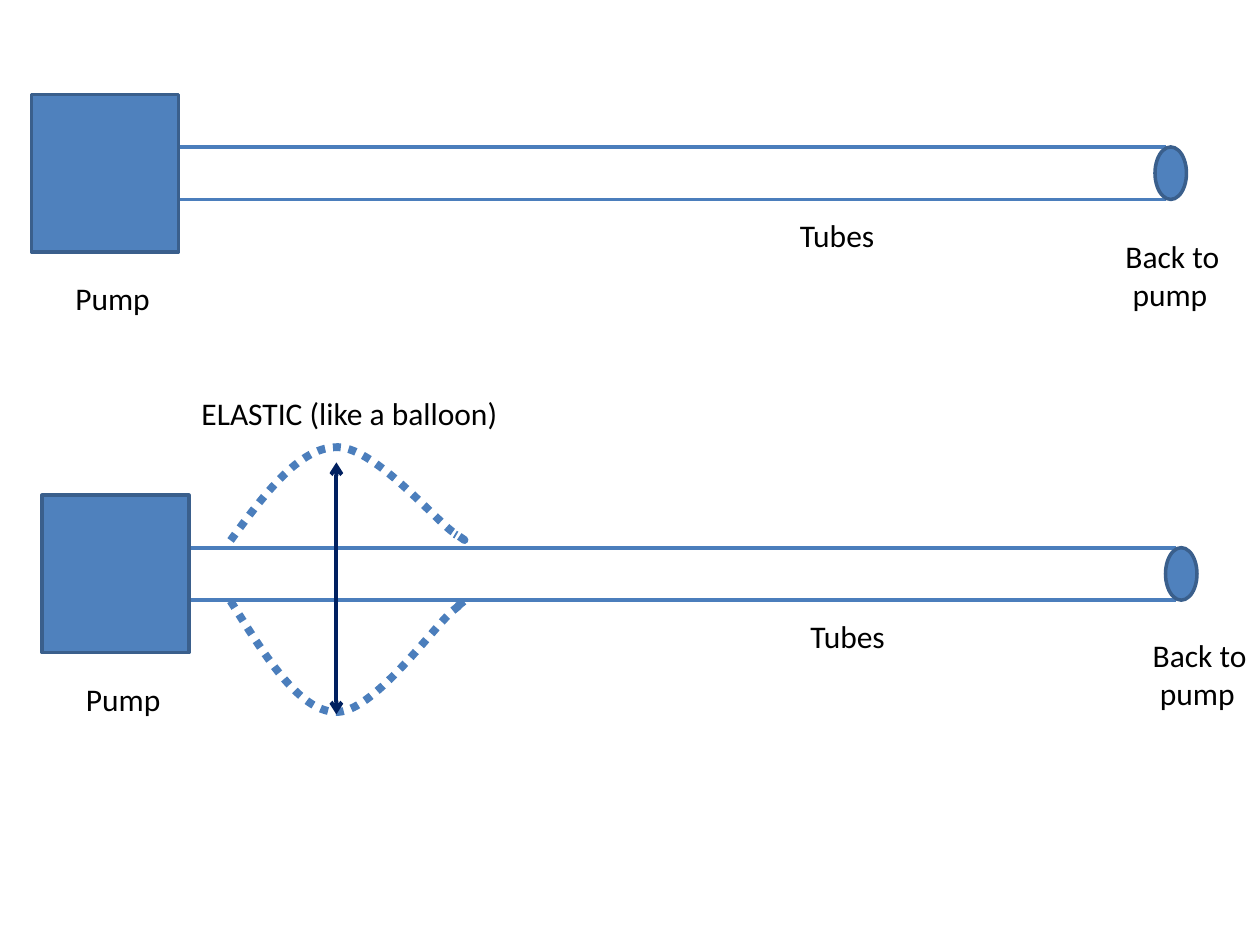
from dataclasses import dataclass

from lxml.etree import SubElement
from pptx import Presentation
from pptx.dml.color import RGBColor
from pptx.enum.dml import MSO_LINE
from pptx.enum.shapes import MSO_CONNECTOR, MSO_SHAPE
from pptx.enum.text import MSO_AUTO_SIZE
from pptx.oxml.ns import qn
from pptx.util import Inches, Pt

FILL, OUTLINE, TUBE, NAVY, BLACK = "4F81BD", "3A5F8C", "4B7EBC", "002060", "000000"
GRID = 1 / 12  # the drawing grid, in inches
TUBE_HEIGHT = 5 * GRID

Point = tuple[float, float]


@dataclass
class Circuit:
    """A pump with its tube, and where the return label stands."""
    left: float
    top: float
    return_left: float
    return_top: float


CIRCUITS = [Circuit(3 * GRID, 0.75, 106 * GRID, 22 * GRID),
            Circuit(4 * GRID, 3.93, 9.05, 5)]

# Start point, then two control points and an end point for each curve
UPPER_BULGE = [(1.83, 4.29), (2.1, 3.92), (2.37, 3.56), (2.66, 3.55),
               (2.95, 3.53), (3.43, 4.1), (3.59, 4.22),
               (3.75, 4.33), (3.68, 4.28), (3.61, 4.24)]
LOWER_BULGE = [(1.83, 4.77), (2.1, 5.2), (2.37, 5.64), (2.66, 5.65),
               (2.95, 5.67), (3.43, 4.99), (3.59, 4.85),
               (3.75, 4.72), (3.68, 4.77), (3.61, 4.83)]


def color(value: str) -> RGBColor:
    return RGBColor.from_string(value)


def style_line(line, value: str, width: float) -> None:
    line.color.rgb = color(value)
    line.width = Pt(width)


def add_solid(page, kind, left: float, top: float, width: float, height: float) -> None:
    shape = page.shapes.add_shape(kind, Inches(left), Inches(top), Inches(width), Inches(height))
    shape.shadow.inherit = False
    shape.fill.solid()
    shape.fill.fore_color.rgb = color(FILL)
    style_line(shape.line, OUTLINE, 2)


def add_line(page, start: Point, end: Point, value: str, arrows: bool = False) -> None:
    connector = page.shapes.add_connector(
        MSO_CONNECTOR.STRAIGHT, *(Inches(length) for length in start + end))
    style_line(connector.line, value, 2.25)
    properties = connector._element.spPr
    if arrows:
        outline = properties.find(qn("a:ln"))
        for tag in ("a:headEnd", "a:tailEnd"):
            SubElement(outline, qn(tag), type="arrow")
    SubElement(properties, qn("a:effectLst"))


def add_label(page, lines: list[str], left: float, top: float, width: float, height: float) -> None:
    box = page.shapes.add_textbox(Inches(left), Inches(top), Inches(width), Inches(height))
    frame = box.text_frame
    frame.word_wrap = False
    frame.auto_size = MSO_AUTO_SIZE.SHAPE_TO_FIT_TEXT
    frame.text = "\n".join(lines)
    for para in frame.paragraphs:
        para.font.name = "Calibri"
        para.font.size = Pt(18)
        para.font.color.rgb = color(BLACK)


def add_bulge(page, points: list[Point]) -> None:
    start, *rest = [(Inches(x), Inches(y)) for x, y in points]
    builder = page.shapes.build_freeform(*start)
    builder.add_line_segments(rest, close=False)
    bulge = builder.convert_to_shape()
    # Turn each three straight segments into one cubic curve
    outline = next(bulge._element.iter(qn("a:path")))
    segments = outline.findall(qn("a:lnTo"))
    for first in range(0, len(segments), 3):
        curve = SubElement(outline, qn("a:cubicBezTo"))
        for segment in segments[first:first + 3]:
            curve.append(segment[0])
            outline.remove(segment)
    bulge.shadow.inherit = False
    bulge.fill.background()
    style_line(bulge.line, TUBE, 4.5)
    bulge.line.dash_style = MSO_LINE.ROUND_DOT


def add_circuit(page, circuit: Circuit) -> None:
    left, top = circuit.left, circuit.top
    upper_wall = top + TUBE_HEIGHT
    lower_wall = upper_wall + TUBE_HEIGHT
    # Tube walls and the open end
    add_line(page, (left + 13 * GRID, upper_wall), (left + 9, upper_wall), TUBE)
    add_line(page, (left + 14 * GRID, lower_wall), (left + 9, lower_wall), TUBE)
    add_solid(page, MSO_SHAPE.OVAL, left + 107 * GRID, upper_wall, 0.25, TUBE_HEIGHT)
    # Pump
    add_solid(page, MSO_SHAPE.RECTANGLE, left, top, 14 * GRID, 1.25)
    # Labels
    add_label(page, ["Pump"], left + 0.25, top + 17 * GRID, 0.8, 0.4)
    add_label(page, ["Tubes"], left + 6, top + 11 * GRID, 0.8, 0.4)
    add_label(page, ["Back to", " pump"], circuit.return_left, circuit.return_top, 0.95, 0.71)


def main() -> None:
    deck = Presentation()
    deck.slide_width, deck.slide_height = Inches(10), Inches(7.5)
    page = deck.slides.add_slide(deck.slide_layouts[6])

    # Rigid circuit above, elastic circuit below
    for circuit in CIRCUITS:
        add_circuit(page, circuit)

    # Elastic stretch of the lower tube
    for points in (UPPER_BULGE, LOWER_BULGE):
        add_bulge(page, points)
    add_line(page, (2.67, 3.67), (2.67, 5.67), NAVY, arrows=True)
    add_label(page, ["ELASTIC (like a balloon)"], 1.5, 3.08, 2.58, 0.4)

    deck.save("out.pptx")


if __name__ == "__main__":
    main()
